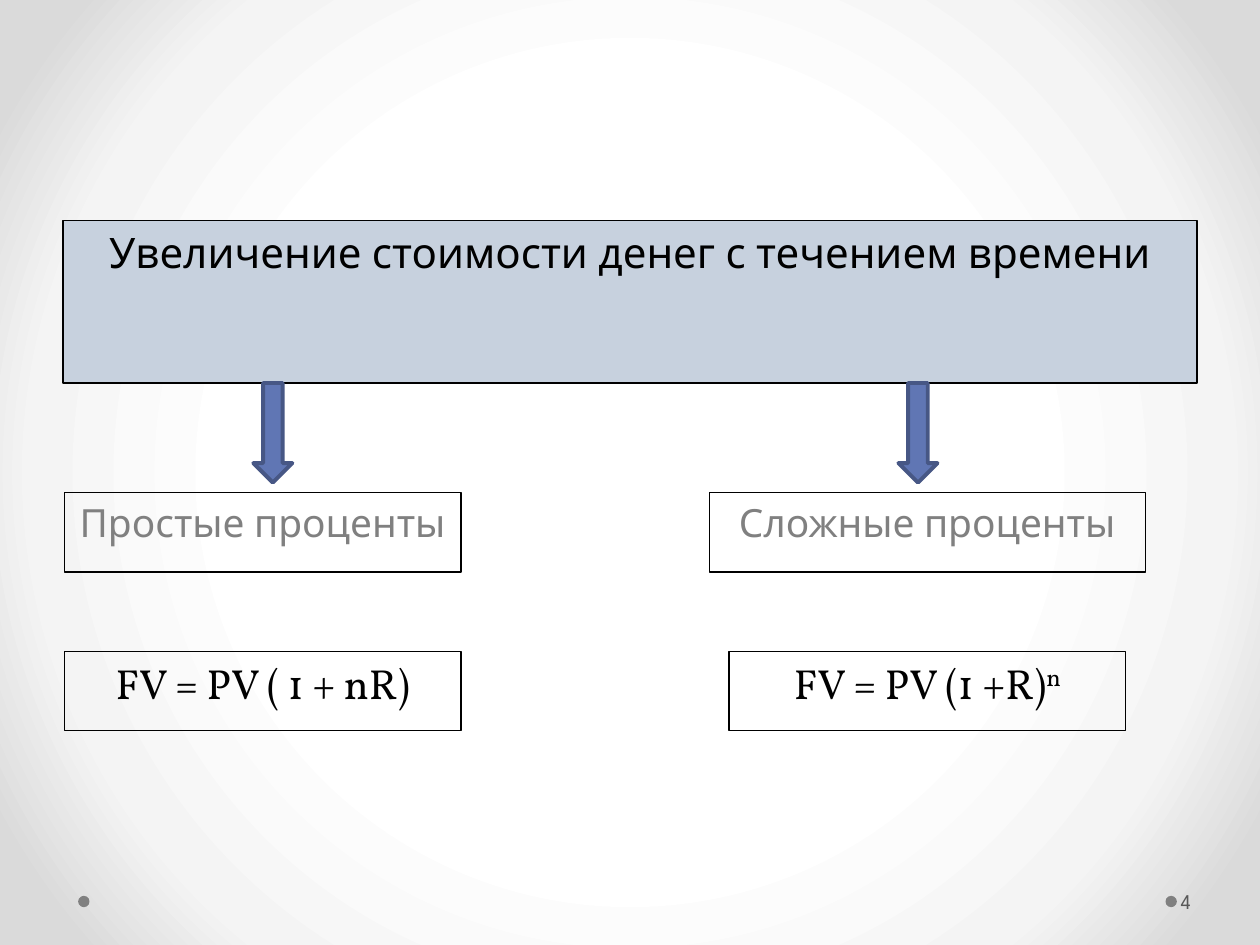
from lxml import etree
from pptx import Presentation
from pptx.dml.color import RGBColor
from pptx.enum.shapes import MSO_SHAPE as Shape
from pptx.enum.text import MSO_ANCHOR as Anchor, PP_ALIGN as Align
from pptx.oxml.ns import qn
from pptx.util import Inches, Pt

SANS, SERIF = "League Spartan", "Vollkorn"
BLACK, GRAY = "000000", "808080"

# Content
TITLE = "Увеличение стоимости денег с течением времени"
PAGE_NUMBER = "4"
# Each branch: heading, heading width, formula, exponent, left edge, arrow left
BRANCHES = [
    ("Простые проценты", 3.15, "FV = PV ( 1 + nR)", "", 0.51, 2.01),
    ("Сложные проценты", 3.46, "FV = PV (1 +R)", "n", 5.63, 7.13),
]
BACKGROUND = [(50, "FFFFFF"), (76, "F4F4F4"), (92, "DADADA")]
DOT_LEFTS = [0.62, 9.25]

# Layout
FORMULA_WIDTH, BOX_HEIGHT = 3.15, 0.63
ARROW_TOP, HEADING_TOP, FORMULA_TOP = 3.04, 3.91, 5.17


def color(value):
    return RGBColor.from_string(value)


def add_block(page, kind, left, top, width, height, fill=None, line=None, weight=0.75):
    block = page.shapes.add_shape(
        kind, Inches(left), Inches(top), Inches(width), Inches(height))
    block.shadow.inherit = False
    if fill:
        block.fill.solid()
        block.fill.fore_color.rgb = color(fill)
    else:
        block.fill.background()
    if line:
        block.line.color.rgb = color(line)
        block.line.width = Pt(weight)
    else:
        block.line.fill.background()
    return block


def write(box, text, font=SANS, size=24, ink=BLACK, align=Align.CENTER,
          anchor=Anchor.TOP, exponent=""):
    frame = box.text_frame
    frame.word_wrap = True
    frame.vertical_anchor = anchor
    para = frame.paragraphs[0]
    para.alignment = align
    for part, baseline in ((text, None), (exponent, "30000")):
        if not part:
            continue
        span = para.add_run()
        span.text = part
        span.font.name = font
        span.font.size = Pt(size)
        span.font.color.rgb = color(ink)
        if baseline:
            span.font._element.set("baseline", baseline)


def paint_background(page, stops):
    """Radial gradient spreading from the centre of the slide."""
    fill = page.background.fill
    fill.gradient()
    gradient = page.background._cSld.find(".//" + qn("a:gradFill"))
    for child in list(gradient):
        gradient.remove(child)
    stop_list = etree.SubElement(gradient, qn("a:gsLst"))
    for position, value in stops:
        stop = etree.SubElement(stop_list, qn("a:gs"), pos=str(position * 1000))
        etree.SubElement(stop, qn("a:srgbClr"), val=value)
    circle = etree.SubElement(gradient, qn("a:path"), {"path": "circle"})
    etree.SubElement(circle, qn("a:fillToRect"),
                     {side: "50000" for side in "ltrb"})


def main():
    deck = Presentation()
    deck.slide_width, deck.slide_height = Inches(10), Inches(7.5)
    page = deck.slides.add_slide(deck.slide_layouts[6])
    paint_background(page, BACKGROUND)

    # Footer dots and page number
    for left in DOT_LEFTS:
        add_block(page, Shape.OVAL, left, 7.11, 0.09, 0.09, fill=GRAY)
    number = page.shapes.add_textbox(
        Inches(9.34), Inches(6.95), Inches(0.61), Inches(0.4))
    write(number, PAGE_NUMBER, size=12, ink="595959", align=Align.LEFT,
          anchor=Anchor.MIDDLE)
    number.text_frame.margin_left = Inches(0.03)
    number.text_frame.margin_right = Inches(0.05)

    # Title bar
    title = add_block(page, Shape.RECTANGLE, 0.5, 1.75, 9, 1.29,
                      fill="C7D1DE", line=BLACK)
    write(title, TITLE)

    # Branches: arrow, heading, and a formula centred below the heading
    for heading, width, formula, exponent, left, arrow_left in BRANCHES:
        arrow = add_block(page, Shape.UP_ARROW, arrow_left, ARROW_TOP, 0.31, 0.79,
                          fill="6076B4", line="475785", weight=2.25)
        arrow.rotation = 180
        box = add_block(page, Shape.RECTANGLE, left, HEADING_TOP, width, BOX_HEIGHT,
                        line=BLACK)
        write(box, heading, size=22.2, ink=GRAY)
        formula_left = left + (width - FORMULA_WIDTH) / 2
        box = add_block(page, Shape.RECTANGLE, formula_left, FORMULA_TOP,
                        FORMULA_WIDTH, BOX_HEIGHT, line=BLACK)
        write(box, formula, font=SERIF, exponent=exponent)

    deck.save("out.pptx")


if __name__ == "__main__":
    main()
